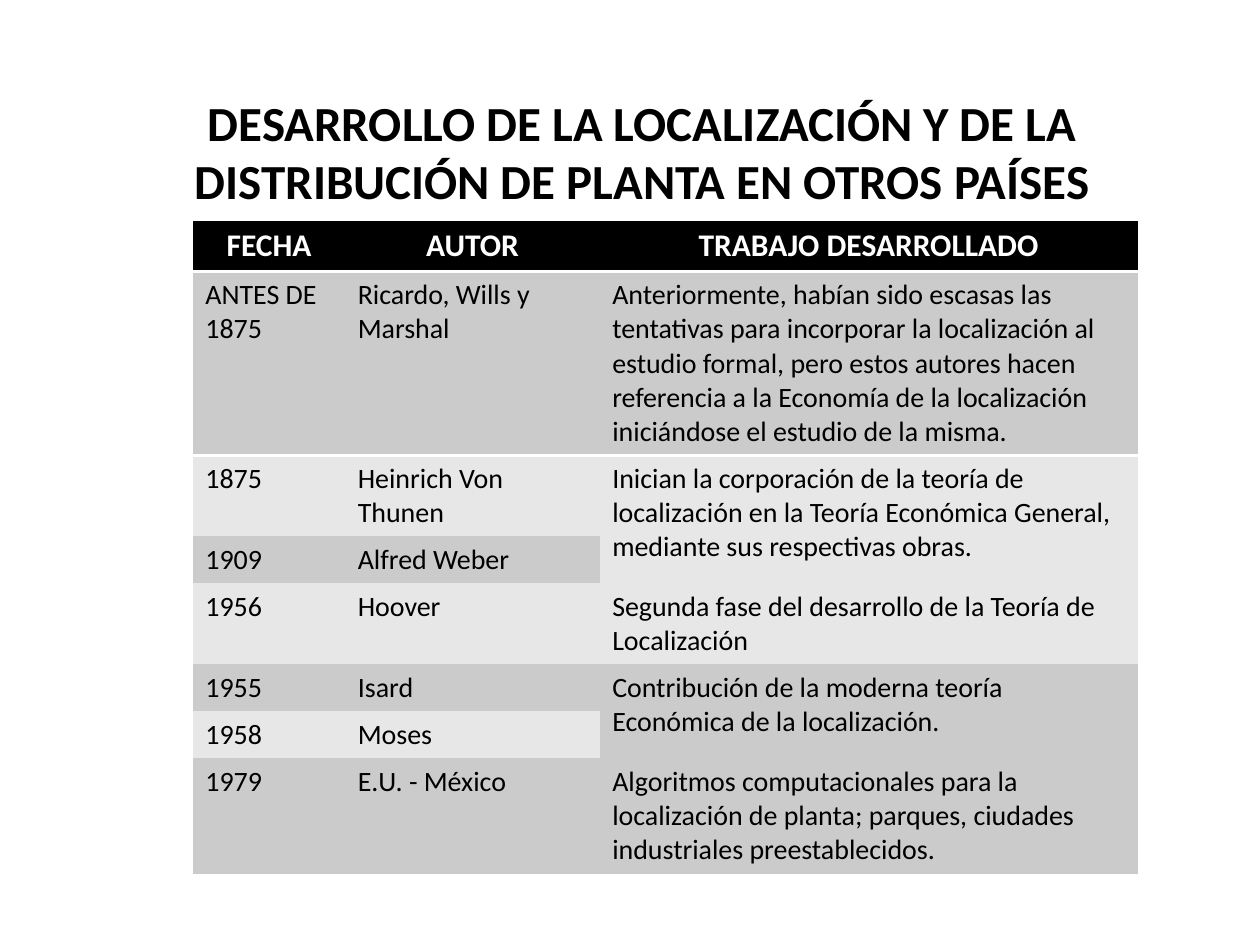
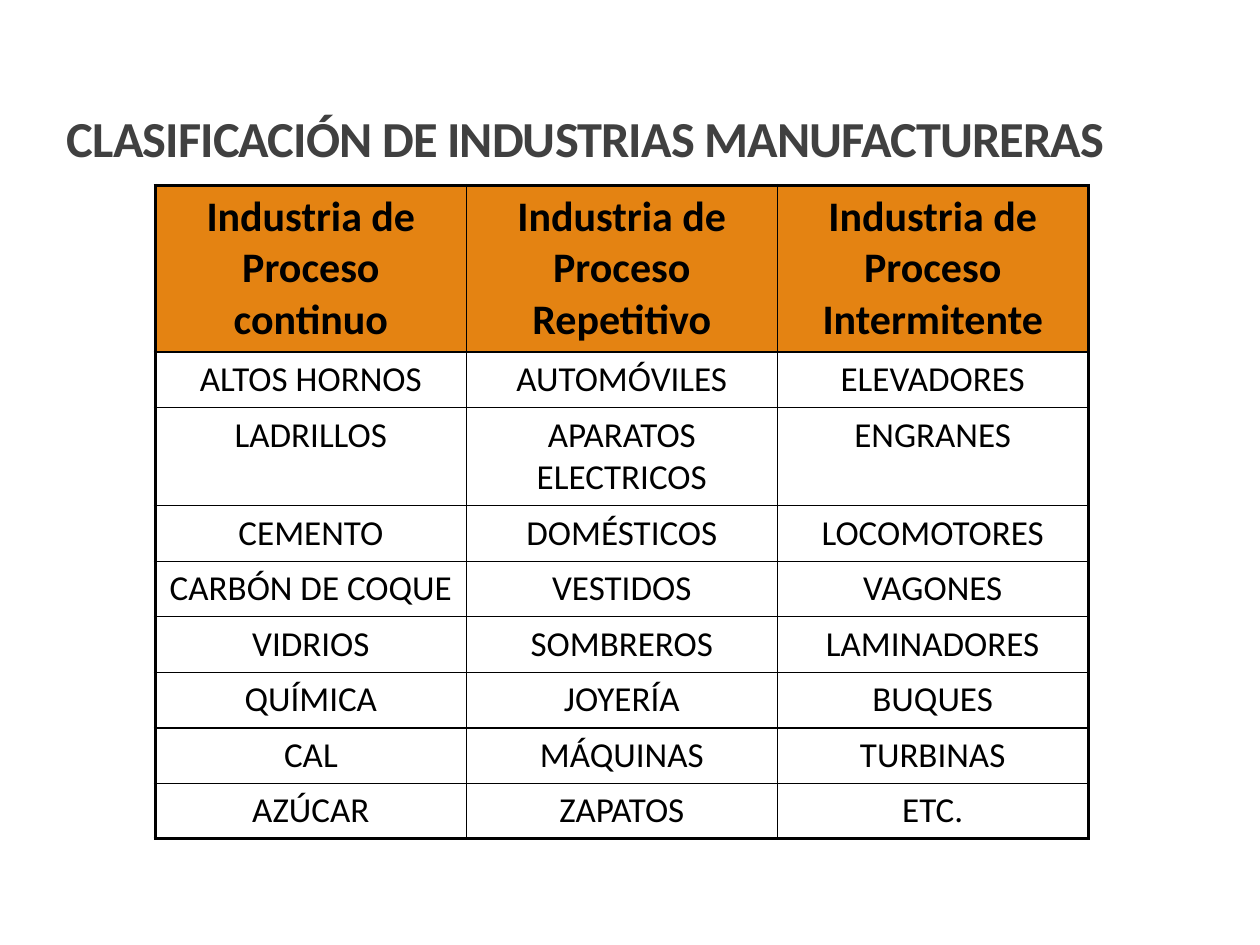
from pptx import Presentation
from pptx.dml.color import RGBColor
from pptx.enum.text import MSO_ANCHOR, MSO_AUTO_SIZE, PP_ALIGN
from pptx.oxml.ns import qn
from pptx.util import Pt
from lxml.etree import SubElement

FONT = "Calibri"
HUES = {
    "ink": "000000", "paper": "FFFFFF", "slate": "404040",
    "dark": "CBCBCB", "light": "E7E7E7", "orange": "E48312",
}
PLAIN = "{2D5ABB26-0587-4C30-8999-92F81FD0307C}"  # table style without grid
THIN, THICK = 1, 2.25

WORKS = [
    ("FECHA", "AUTOR", "TRABAJO DESARROLLADO"),
    ("ANTES DE 1875", "Ricardo, Wills y Marshal",
     "Anteriormente, habían sido escasas las tentativas para incorporar la "
     "localización al estudio formal, pero estos autores hacen referencia a la "
     "Economía de la localización iniciándose el estudio de la misma."),
    ("1875", "Heinrich Von Thunen",
     "Inician la corporación de la teoría de localización en la Teoría "
     "Económica General, mediante sus respectivas obras."),
    ("1909", "Alfred Weber", None),
    ("1956", "Hoover", "Segunda fase del desarrollo de la Teoría de Localización"),
    ("1955", "Isard",
     "Contribución de la moderna teoría Económica de la localización."),
    ("1958", "Moses", None),
    ("1979", "E.U. - México",
     "Algoritmos computacionales para la localización de planta; parques, "
     "ciudades industriales preestablecidos."),
]
PLANTS = [
    ("Industria de Proceso continuo", "Industria de Proceso Repetitivo",
     "Industria de Proceso Intermitente"),
    ("ALTOS HORNOS", "AUTOMÓVILES", "ELEVADORES"),
    ("LADRILLOS", "APARATOS ELECTRICOS", "ENGRANES"),
    ("CEMENTO", "DOMÉSTICOS", "LOCOMOTORES"),
    ("CARBÓN DE COQUE", "VESTIDOS", "VAGONES"),
    ("VIDRIOS", "SOMBREROS", "LAMINADORES"),
    ("QUÍMICA", "JOYERÍA", "BUQUES"),
    ("CAL", "MÁQUINAS", "TURBINAS"),
    ("AZÚCAR", "ZAPATOS", "ETC."),
]


def style(para, size, hue, bold, align):
    para.alignment = align
    for run in para.runs:
        font = run.font
        font.name, font.size, font.bold = FONT, Pt(size), bold
        font.color.rgb = RGBColor.from_string(HUES[hue])


def add_title(slide, text, box, size, hue, align, anchor, inset=7.2):
    title = slide.shapes.title
    title.left, title.top, title.width, title.height = map(Pt, box)
    frame = title.text_frame
    frame.text = text
    frame.word_wrap = True
    frame.auto_size = MSO_AUTO_SIZE.NONE
    frame.vertical_anchor = anchor
    frame.margin_left = frame.margin_right = Pt(inset)
    style(frame.paragraphs[0], size, hue, True, align)
    return frame.paragraphs[0]


def add_table(slide, rows, left, top, widths, heights):
    frame = slide.shapes.add_table(len(rows), len(widths), Pt(left), Pt(top),
                                   Pt(sum(widths)), Pt(sum(heights)))
    table = frame.table
    frame._element.find(".//" + qn("a:tableStyleId")).text = PLAIN
    table.horz_banding = False
    for col, width in zip(table.columns, widths):
        col.width = Pt(width)
    for row, height in zip(table.rows, heights):
        row.height = Pt(height)
    return table


def fill_cell(cell, text, size, hue, bold, align, fill=None):
    if text:
        cell.text_frame.text = text
        style(cell.text_frame.paragraphs[0], size, hue, bold, align)
    if fill:
        cell.fill.solid()
        cell.fill.fore_color.rgb = RGBColor.from_string(HUES[fill])
    else:
        cell.fill.background()


def add_edges(cell, hue, **sides):
    """Draw borders; sides are given in the order L, R, T, B, before any fill."""
    props = cell._tc.get_or_add_tcPr()
    for side, width in sides.items():
        line = SubElement(props, qn("a:ln" + side), w=str(Pt(width)))
        SubElement(SubElement(line, qn("a:solidFill")), qn("a:srgbClr"),
                   val=HUES[hue])


def add_works(slide):
    add_title(slide, "DESARROLLO DE LA LOCALIZACIÓN Y DE LA DISTRIBUCIÓN DE "
              "PLANTA EN OTROS PAÍSES", (25.2, 49, 683.3, 74.9), 28, "ink",
              PP_ALIGN.CENTER, MSO_ANCHOR.TOP, inset=57.6)
    table = add_table(slide, WORKS, 110.2, 126, (87.1, 145.4, 307.4),
                      (28.8, 103, 45.4, 26.6, 45.4, 26.6, 26.6, 64.8))
    for r, row in enumerate(WORKS):
        for c, text in enumerate(row):
            cell = table.cell(r, c)
            if r == 0:
                add_edges(cell, "paper", B=2)
                fill_cell(cell, text, 18, "paper", True, PP_ALIGN.CENTER, "ink")
                continue
            if r == 1:
                add_edges(cell, "paper", T=2)
            band = "dark" if r % 2 else "light"
            fill_cell(cell, text, 16, "ink", False, PP_ALIGN.LEFT, band)
            # A work shared with the row above spans both rows
            if text is None:
                table.cell(r - 1, c).merge(cell)


def add_plants(slide):
    para = add_title(slide, "CLASIFICACIÓN DE INDUSTRIAS MANUFACTURERAS",
                     (31, 60.5, 648, 38.9), 28.8, "slate", PP_ALIGN.LEFT,
                     MSO_ANCHOR.BOTTOM)
    para.line_spacing = 0.85
    para.runs[0]._r.get_or_add_rPr().set("spc", "-50")
    heights = [93.6, 31, 55.4] + [31] * 6
    table = add_table(slide, PLANTS, 88.8, 106, [177.7] * 3, heights)
    end, side = len(PLANTS) - 1, 2
    for r, row in enumerate(PLANTS):
        for c, text in enumerate(row):
            cell, head = table.cell(r, c), r == 0
            add_edges(cell, "ink",
                      L=THICK if c == 0 else THIN,
                      R=THICK if c == side else THIN,
                      T=THICK if head else THIN,
                      B=THICK if r == end else THIN)
            fill_cell(cell, text, 24 if head else 20, "ink", head,
                      PP_ALIGN.CENTER, "orange" if head else None)
            if head:
                cell.vertical_anchor = MSO_ANCHOR.MIDDLE


def main():
    deck = Presentation()
    deck.slide_width, deck.slide_height = Pt(720), Pt(540)
    for build in (add_works, add_plants):
        build(deck.slides.add_slide(deck.slide_layouts[5]))
    deck.save("out.pptx")


if __name__ == "__main__":
    main()
